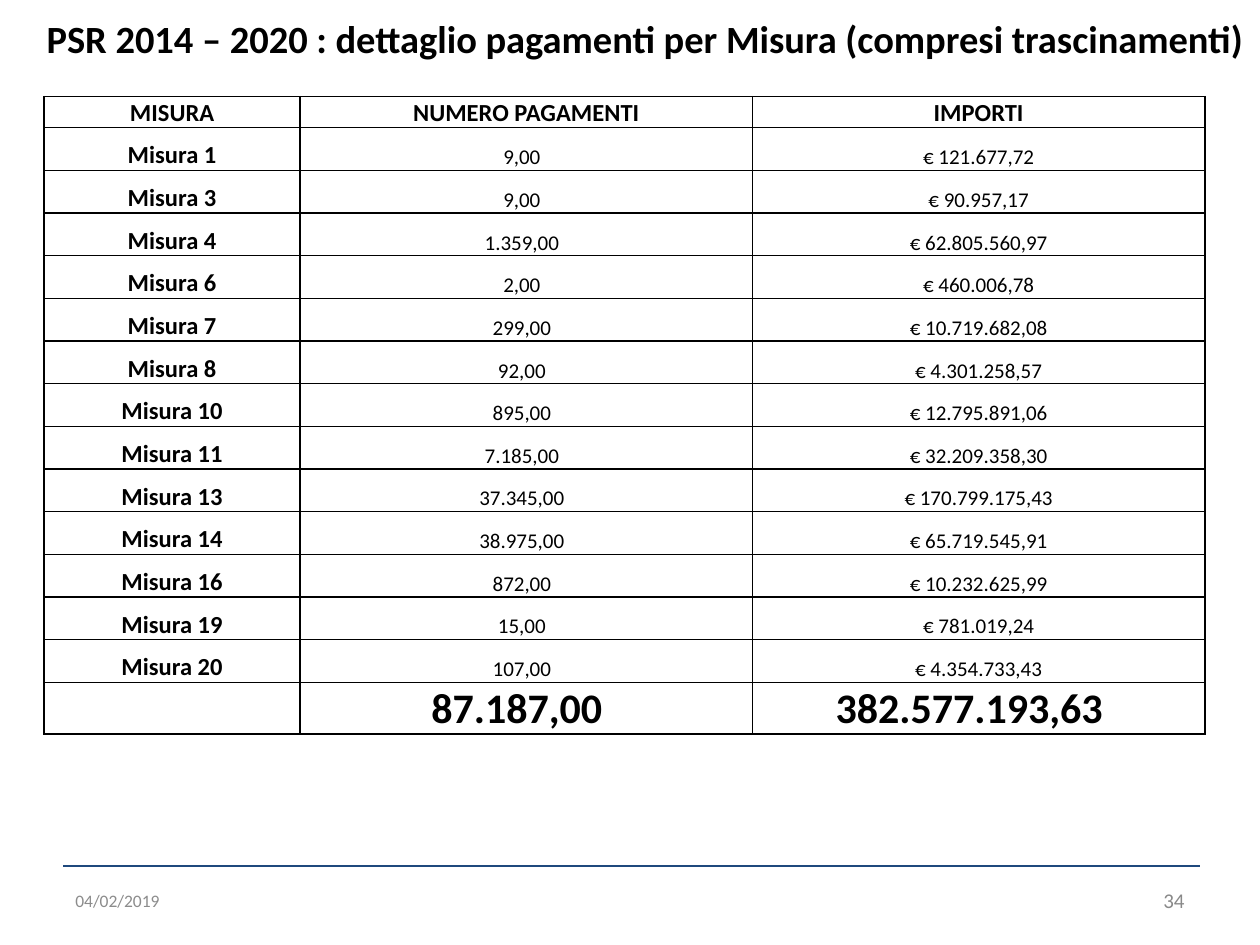
from dataclasses import dataclass

from lxml.etree import SubElement
from pptx import Presentation
from pptx.dml.color import RGBColor
from pptx.enum.shapes import MSO_CONNECTOR
from pptx.enum.text import MSO_ANCHOR, MSO_AUTO_SIZE, PP_ALIGN
from pptx.oxml.ns import qn
from pptx.slide import Slide
from pptx.table import _Cell
from pptx.text.text import _Paragraph
from pptx.util import Cm, Pt


@dataclass(frozen=True)
class Theme:
    font: str = "Calibri"
    text: str = "000000"
    date: str = "8C8C8C"
    number: str = "898989"
    rule: str = "1F497D"
    title_size: int = 22
    label_size: int = 14
    value_size: int = 12
    total_size: int = 24
    date_size: int = 10
    number_size: int = 12


@dataclass(frozen=True)
class CellStyle:
    size: int
    bold: bool
    right_inset: float = 0.03


@dataclass(frozen=True)
class Footer:
    text: str
    left: float
    size: int
    color: str
    alignment: PP_ALIGN


@dataclass(frozen=True)
class Payment:
    measure: str
    count: str
    amount: str


THEME = Theme()
LABEL = CellStyle(THEME.label_size, True)
COUNT = CellStyle(THEME.value_size, False, 0.21)
AMOUNT = CellStyle(THEME.value_size, False)
TOTAL = CellStyle(THEME.total_size, True, 0.41)

TITLE = "PSR 2014 – 2020 : dettaglio pagamenti per Misura (compresi trascinamenti)"
HEADER = Payment("MISURA", "NUMERO PAGAMENTI", "IMPORTI")
PAYMENTS = [
    Payment("Misura 1", "9,00", "€ 121.677,72"),
    Payment("Misura 3", "9,00", "€ 90.957,17"),
    Payment("Misura 4", "1.359,00", "€ 62.805.560,97"),
    Payment("Misura 6", "2,00", "€ 460.006,78"),
    Payment("Misura 7", "299,00", "€ 10.719.682,08"),
    Payment("Misura 8", "92,00", "€ 4.301.258,57"),
    Payment("Misura 10", "895,00", "€ 12.795.891,06"),
    Payment("Misura 11", "7.185,00", "€ 32.209.358,30"),
    Payment("Misura 13", "37.345,00", "€ 170.799.175,43"),
    Payment("Misura 14", "38.975,00", "€ 65.719.545,91"),
    Payment("Misura 16", "872,00", "€ 10.232.625,99"),
    Payment("Misura 19", "15,00", "€ 781.019,24"),
    Payment("Misura 20", "107,00", "€ 4.354.733,43"),
]
TOTALS = Payment("", "87.187,00", "382.577.193,63")
COLUMN_WIDTHS = (5.16, 9.12, 9.12)
HEADER_HEIGHT = 0.48
ROW_HEIGHT = 0.86
FOOTERS = [
    Footer("04/02/2019", 1.27, THEME.date_size, THEME.date, PP_ALIGN.LEFT),
    Footer("34", 18.21, THEME.number_size, THEME.number, PP_ALIGN.RIGHT),
]


def format_paragraph(paragraph: _Paragraph, size: int, color: str, bold: bool, alignment: PP_ALIGN) -> None:
    paragraph.alignment = alignment
    paragraph.font.name = THEME.font
    paragraph.font.size = Pt(size)
    paragraph.font.bold = bold
    paragraph.font.color.rgb = RGBColor.from_string(color)


def add_borders(cell: _Cell) -> None:
    properties = cell._tc.get_or_add_tcPr()
    for side in ("a:lnL", "a:lnR", "a:lnT", "a:lnB"):
        border = SubElement(properties, qn(side), w=str(Pt(1)))
        fill = SubElement(border, qn("a:solidFill"))
        SubElement(fill, qn("a:srgbClr"), val=THEME.text)


def fill_cell(cell: _Cell, text: str, style: CellStyle) -> None:
    cell.text = text
    cell.vertical_anchor = MSO_ANCHOR.BOTTOM
    cell.margin_left = cell.margin_top = Cm(0.03)
    cell.margin_right = Cm(style.right_inset)
    cell.margin_bottom = Cm(0)
    format_paragraph(cell.text_frame.paragraphs[0], style.size, THEME.text, style.bold, PP_ALIGN.CENTER)
    add_borders(cell)
    cell.fill.background()


def add_title(slide: Slide) -> None:
    title = slide.shapes.title
    title.left, title.top, title.width, title.height = Cm(0.3), Cm(0.13), Cm(25.4), Cm(1.8)
    frame = title.text_frame
    frame.text = TITLE
    frame.word_wrap = True
    frame.auto_size = MSO_AUTO_SIZE.NONE
    frame.vertical_anchor = MSO_ANCHOR.TOP
    frame.margin_top = Cm(0.17)
    format_paragraph(frame.paragraphs[0], THEME.title_size, THEME.text, True, PP_ALIGN.CENTER)


def add_payment_table(slide: Slide) -> None:
    rows = [
        (HEADER, (LABEL, LABEL, LABEL)),
        *((payment, (LABEL, COUNT, AMOUNT)) for payment in PAYMENTS),
        (TOTALS, (LABEL, TOTAL, TOTAL)),
    ]
    height = HEADER_HEIGHT + ROW_HEIGHT * (len(rows) - 1)
    table = slide.shapes.add_table(
        len(rows), len(COLUMN_WIDTHS), Cm(0.89), Cm(1.95), Cm(sum(COLUMN_WIDTHS)), Cm(height)
    ).table
    table.first_row = False
    table.horz_banding = False
    for column, width in zip(table.columns, COLUMN_WIDTHS):
        column.width = Cm(width)
    for index, (payment, styles) in enumerate(rows):
        table.rows[index].height = Cm(ROW_HEIGHT if index else HEADER_HEIGHT)
        texts = (payment.measure, payment.count, payment.amount)
        for cell, text, style in zip(table.rows[index].cells, texts, styles):
            fill_cell(cell, text, style)


def add_footer_rule(slide: Slide) -> None:
    rule = slide.shapes.add_connector(MSO_CONNECTOR.STRAIGHT, Cm(1.27), Cm(17.46), Cm(24.2), Cm(17.46))
    rule.line.color.rgb = RGBColor.from_string(THEME.rule)
    rule.line.width = Pt(1.5)
    SubElement(rule._element.spPr, qn("a:effectLst"))


def add_footer(slide: Slide, footer: Footer) -> None:
    frame = slide.shapes.add_textbox(Cm(footer.left), Cm(17.65), Cm(5.92), Cm(1.01)).text_frame
    frame.text = footer.text
    frame.word_wrap = True
    frame.vertical_anchor = MSO_ANCHOR.MIDDLE
    format_paragraph(frame.paragraphs[0], footer.size, footer.color, False, footer.alignment)


def main() -> None:
    presentation = Presentation()
    presentation.slide_width = Cm(25.4)
    presentation.slide_height = Cm(19.05)
    slide = presentation.slides.add_slide(presentation.slide_layouts.get_by_name("Title Only"))
    add_footer_rule(slide)
    for footer in FOOTERS:
        add_footer(slide, footer)
    add_title(slide)
    add_payment_table(slide)
    presentation.save("out.pptx")


if __name__ == "__main__":
    main()
